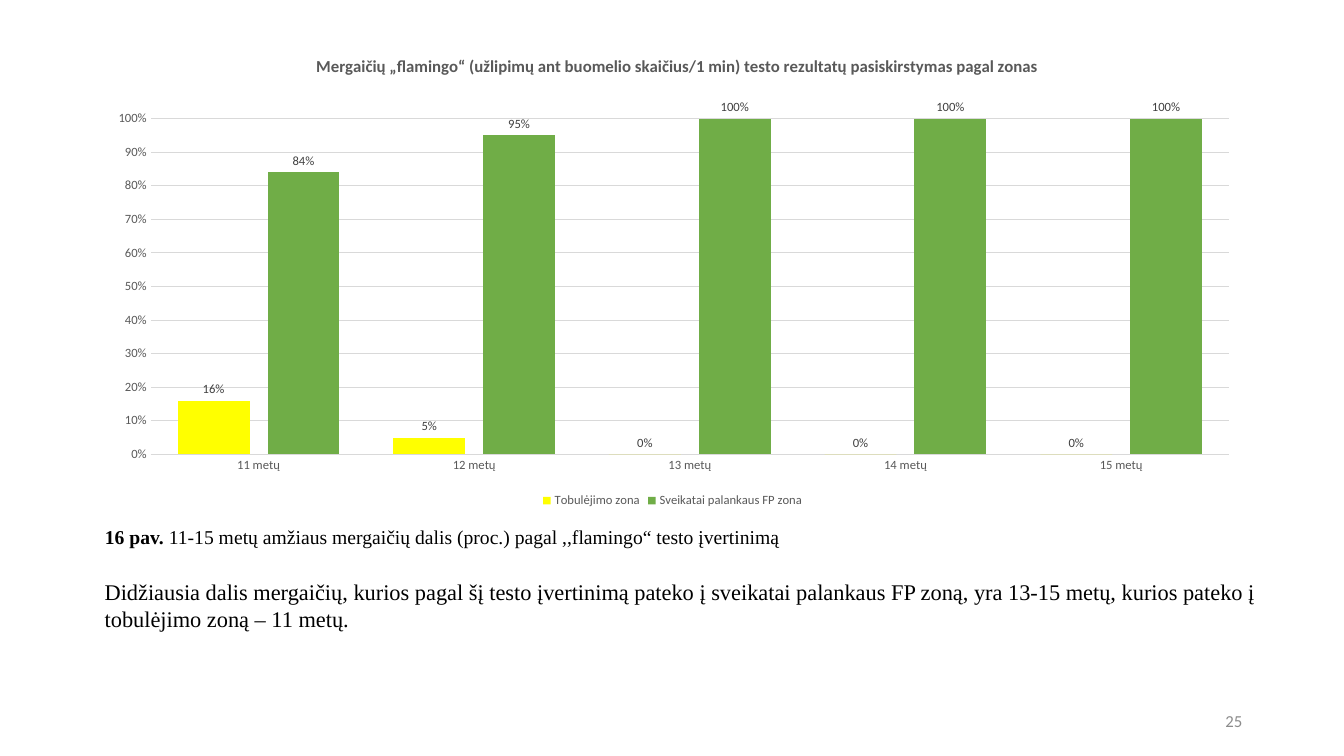
from dataclasses import dataclass

import pptx
import pptx.chart.data
import pptx.dml.color
import pptx.enum.chart
import pptx.enum.text
import pptx.oxml
import pptx.oxml.ns
import pptx.util

Inches = pptx.util.Inches
COLORS = {
    "black": "000000",
    "heading": "595959",
    "label": "404040",
    "grid": "D9D9D9",
    "number": "8C8C8C",
    "yellow": "FFFF00",
    "green": "70AD47",
}
SERIF, SANS = "Times New Roman", "Calibri"


@dataclass
class Zone:
    name: str
    shares: list[float]
    color: str


@dataclass
class Box:
    left: float
    top: float
    width: float
    height: float

    def inches(self) -> list[pptx.util.Length]:
        return [Inches(v) for v in (self.left, self.top, self.width, self.height)]


AGES = [f"{age} metų" for age in range(11, 16)]
ZONES = [
    Zone("Tobulėjimo zona", [0.16, 0.05, 0, 0, 0], "yellow"),
    Zone("Sveikatai palankaus FP zona", [0.84, 0.95, 1, 1, 1], "green"),
]


def rgb(color: str) -> pptx.dml.color.RGBColor:
    return pptx.dml.color.RGBColor.from_string(COLORS[color])


def style_font(font, size: float, color: str, name: str = SANS, bold: bool = False) -> None:
    font.size, font.name, font.bold = pptx.util.Pt(size), name, bold
    font.color.rgb = rgb(color)


def add_text(paragraph, text: str, *, size: float, color: str = "black",
             name: str = SERIF, bold: bool = False, align: str = "LEFT") -> None:
    paragraph.alignment = pptx.enum.text.PP_ALIGN[align]
    run = paragraph.add_run()
    run.text = text
    style_font(run.font, size, color, name, bold)


def add_box(slide, box: Box, anchor: str, text: str, **text_format) -> None:
    frame = slide.shapes.add_textbox(*box.inches()).text_frame
    frame.word_wrap = True
    frame.vertical_anchor = pptx.enum.text.MSO_ANCHOR[anchor]
    add_text(frame.paragraphs[0], text, **text_format)


def set_layout(part, position: int, **fractions: float) -> None:
    """Fix a chart part at fractions of the chart area."""
    for old in part.findall(pptx.oxml.ns.qn("c:layout")):
        part.remove(old)
    target = '<c:layoutTarget val="inner"/>' if "w" in fractions else ""
    modes = '<c:xMode val="edge"/><c:yMode val="edge"/>'
    values = "".join(f'<c:{key} val="{value}"/>' for key, value in fractions.items())
    part.insert(position, pptx.oxml.parse_xml(
        f'<c:layout {pptx.oxml.ns.nsdecls("c")}><c:manualLayout>'
        f"{target}{modes}{values}</c:manualLayout></c:layout>"))


def style_axis(axis) -> None:
    axis.major_tick_mark = axis.minor_tick_mark = pptx.enum.chart.XL_TICK_MARK.NONE
    style_font(axis.tick_labels.font, 9, "heading")


def style_line(line) -> None:
    line.color.rgb = rgb("grid")
    line.width = pptx.util.Pt(0.75)


def add_zone_chart(slide, box: Box) -> None:
    data = pptx.chart.data.CategoryChartData(number_format="0%")
    data.categories = AGES
    for zone in ZONES:
        data.add_series(zone.name, zone.shares)
    chart = slide.shapes.add_chart(
        pptx.enum.chart.XL_CHART_TYPE.COLUMN_CLUSTERED, *box.inches(), data).chart
    style_font(chart.font, 10, "black")

    # Heading and plot position
    add_text(chart.chart_title.text_frame.paragraphs[0],
             "Mergaičių „flamingo“ (užlipimų ant buomelio skaičius/1 min) "
             "testo rezultatų pasiskirstymas pagal zonas",
             size=12, color="heading", name=SANS, bold=True, align="CENTER")
    chart.chart_title.include_in_layout = False
    set_layout(chart.element.find(".//" + pptx.oxml.ns.qn("c:title")), 1, x=0.19, y=0.04)
    set_layout(chart.element.find(".//" + pptx.oxml.ns.qn("c:plotArea")), 0,
               x=0.05, y=0.18, w=0.93, h=0.7)

    # Axes
    style_axis(chart.category_axis)
    style_line(chart.category_axis.format.line)
    shares = chart.value_axis
    style_axis(shares)
    shares.format.line.fill.background()
    style_line(shares.major_gridlines.format.line)
    shares.minimum_scale, shares.maximum_scale, shares.major_unit = 0, 1, 0.1
    shares.tick_labels.number_format = "0%"
    shares.tick_labels.number_format_is_linked = False

    # Legend
    chart.has_legend = True
    chart.legend.position = pptx.enum.chart.XL_LEGEND_POSITION.BOTTOM
    chart.legend.include_in_layout = False
    style_font(chart.legend.font, 9, "heading")

    # Columns and their labels
    plot = chart.plots[0]
    plot.gap_width, plot.overlap, plot.vary_by_categories = 75, -25, False
    for series, zone in zip(plot.series, ZONES):
        series.invert_if_negative = False
        series.format.fill.solid()
        series.format.fill.fore_color.rgb = rgb(zone.color)
        labels = series.data_labels
        labels.show_value = True
        labels.position = pptx.enum.chart.XL_LABEL_POSITION.OUTSIDE_END
        labels.number_format, labels.number_format_is_linked = "0%", False
        style_font(labels.font, 9, "label")


def main() -> None:
    deck = pptx.Presentation()
    deck.slide_width, deck.slide_height = Inches(13.33), Inches(7.5)
    slide = deck.slides.add_slide(deck.slide_layouts.get_by_name("Title Only"))

    # Figure caption
    caption = slide.shapes.title
    caption.left, caption.top, caption.width, caption.height = Box(0.94, 5.11, 11.5, 0.45).inches()
    caption.text_frame.vertical_anchor = pptx.enum.text.MSO_ANCHOR.MIDDLE
    caption_line = caption.text_frame.paragraphs[0]
    caption_line.line_spacing = 0.9
    add_text(caption_line, "16 pav. ", size=14, bold=True)
    add_text(caption_line, "11-15 metų amžiaus mergaičių dalis (proc.) pagal "
             ",,flamingo“ testo įvertinimą", size=14)

    add_zone_chart(slide, Box(0.92, 0.32, 11.5, 4.76))

    # Page number and conclusion
    add_box(slide, Box(9.42, 6.95, 3, 0.4), "MIDDLE", "25",
            size=12, color="number", name=SANS, align="RIGHT")
    add_box(slide, Box(0.94, 5.69, 11.7, 0.64), "TOP",
            "Didžiausia dalis mergaičių, kurios pagal šį testo įvertinimą pateko į "
            "sveikatai palankaus FP zoną, yra 13-15 metų, kurios pateko į "
            "tobulėjimo zoną – 11 metų.", size=16)

    deck.save("out.pptx")


if __name__ == "__main__":
    main()
